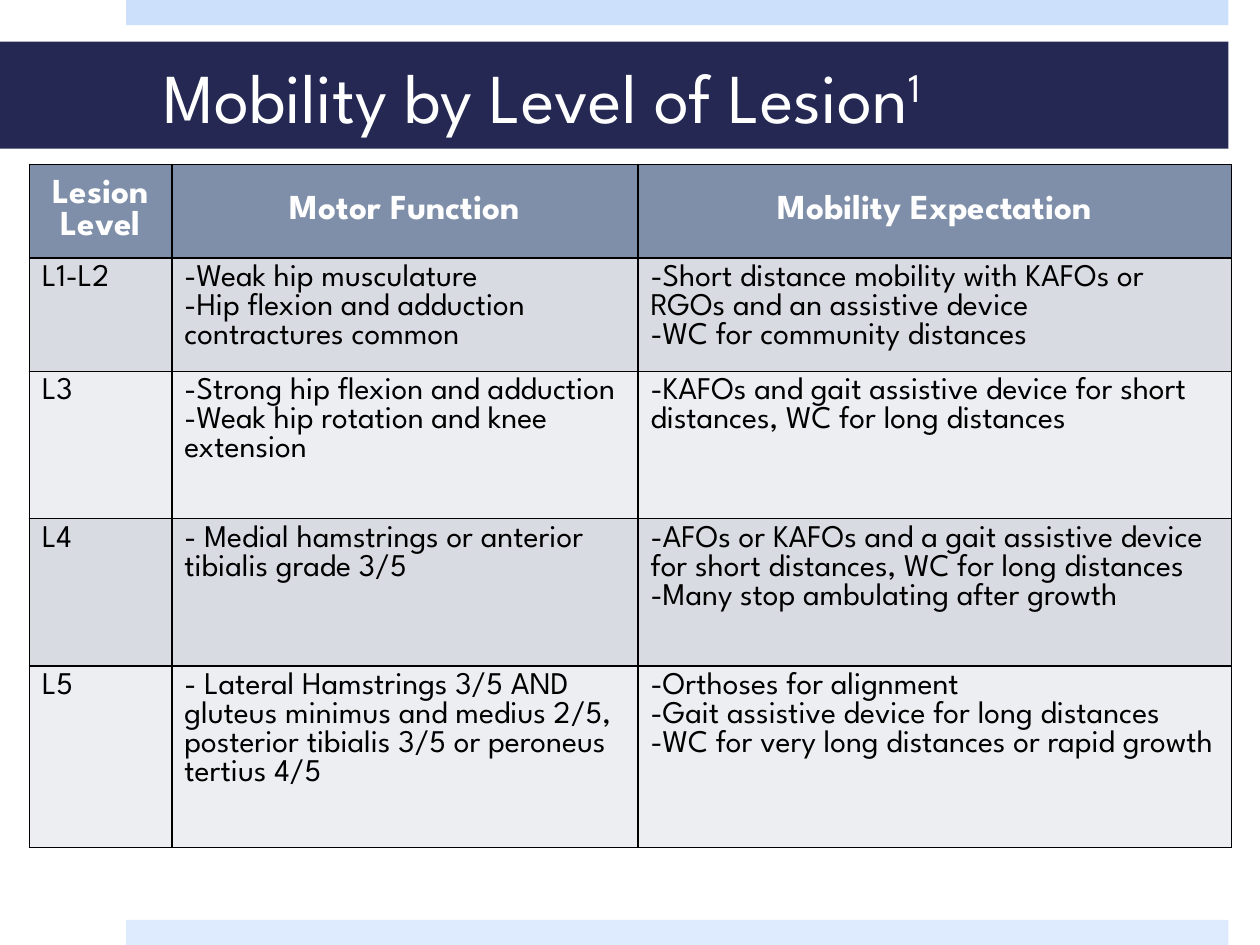
from pptx import Presentation
from pptx import util as u
from pptx.dml.color import RGBColor
from pptx.enum import shapes, text
from pptx.oxml import parse_xml
from pptx.oxml.ns import nsdecls

Pt = u.Pt
FONT = "League Spartan"
NAVY = RGBColor(0x24, 0x28, 0x52)
SKY = RGBColor(0xCD, 0xE0, 0xFB)
PALE = RGBColor(0xDE, 0xEA, 0xFD)
SLATE = RGBColor(0x7F, 0x8F, 0xA9)
BANDS = [RGBColor(0xD8, 0xDB, 0xE2), RGBColor(0xEC, 0xEE, 0xF1)]
WHITE = RGBColor(0xFF, 0xFF, 0xFF)
BLACK = RGBColor(0, 0, 0)

COLS = [81.4, 266.4, 339.1]
ROWS = [53.3, 64.8, 84.2, 84.2, 103.7]
HEAD = ["Lesion Level", "Motor Function", "Mobility Expectation"]
LEVELS = [
    ["L1-L2",
     "-Weak hip musculature\n-Hip flexion and adduction contractures common",
     "-Short distance mobility with KAFOs or RGOs and an assistive device\n"
     "-WC for community distances"],
    ["L3",
     "-Strong hip flexion and adduction\n-Weak hip rotation and knee extension",
     "-KAFOs and gait assistive device for short distances, "
     "WC for long distances"],
    ["L4",
     "- Medial hamstrings or anterior tibialis grade 3/5",
     "-AFOs or KAFOs and a gait assistive device for short distances, "
     "WC for long distances\n-Many stop ambulating after growth"],
    ["L5",
     "- Lateral Hamstrings 3/5 AND gluteus minimus and medius 2/5, "
     "posterior tibialis 3/5 or peroneus tertius 4/5",
     "-Orthoses for alignment\n-Gait assistive device for long distances\n"
     "-WC for very long distances or rapid growth"],
]


def style(run, size, color, bold=False):
    font = run.font
    font.name, font.size, font.bold = FONT, Pt(size), bold
    font.color.rgb = color


def add_bar(slide, top, color):
    bar = slide.shapes.add_shape(
        shapes.MSO_SHAPE.RECTANGLE, Pt(72), Pt(top), Pt(630), Pt(14.4))
    bar.shadow.inherit = False
    bar.fill.solid()
    bar.fill.fore_color.rgb = color
    bar.line.fill.background()


def set_title(slide, words, note):
    """Fill the title band; note is set as a superscript."""
    title = slide.shapes.title
    title.left, title.top = Pt(0), Pt(23.8)
    title.width, title.height = Pt(702), Pt(61.2)
    title.fill.solid()
    title.fill.fore_color.rgb = NAVY
    frame = title.text_frame
    frame.auto_size = text.MSO_AUTO_SIZE.NONE
    frame.vertical_anchor = text.MSO_ANCHOR.MIDDLE
    frame.margin_left, frame.margin_right = Pt(93.6), Pt(21.6)
    frame.margin_top = frame.margin_bottom = Pt(3.6)
    frame.text = words
    para = frame.paragraphs[0]
    para.alignment = text.PP_ALIGN.LEFT
    mark = para.add_run()
    mark.text = note
    for run in para.runs:
        style(run, 40, WHITE)
    mark.font._element.set("baseline", "30000")


def add_border(cell):
    props = cell._tc.get_or_add_tcPr()
    for spot, side in enumerate(["lnL", "lnR", "lnT", "lnB"]):
        props.insert(spot, parse_xml(
            f'<a:{side} {nsdecls("a")} w="{Pt(1)}"><a:solidFill>'
            f'<a:srgbClr val="{BLACK}"/></a:solidFill></a:{side}>'))


def fill_cell(cell, words, color, head):
    cell.fill.solid()
    cell.fill.fore_color.rgb = color
    add_border(cell)
    cell.text_frame.text = words
    if head:
        cell.vertical_anchor = text.MSO_ANCHOR.MIDDLE
    for para in cell.text_frame.paragraphs:
        if head:
            para.alignment = text.PP_ALIGN.CENTER
        for run in para.runs:
            style(run, 20 if head else 18, WHITE if head else BLACK, head)


def add_grid(slide):
    table = slide.shapes.add_table(
        len(ROWS), len(COLS), Pt(16.8), Pt(94.1),
        Pt(sum(COLS)), Pt(sum(ROWS))).table
    for col, width in zip(table.columns, COLS):
        col.width = Pt(width)
    for row, height in zip(table.rows, ROWS):
        row.height = Pt(height)
    for r, line in enumerate([HEAD] + LEVELS):
        color = BANDS[(r - 1) % 2] if r else SLATE
        for c, words in enumerate(line):
            fill_cell(table.cell(r, c), words, color, r == 0)


def main():
    deck = Presentation()
    deck.slide_width, deck.slide_height = Pt(720), Pt(540)
    slide = deck.slides.add_slide(deck.slide_layouts[5])
    add_bar(slide, 0, SKY)
    add_bar(slide, 525.6, PALE)
    set_title(slide, "Mobility by Level of Lesion", "1")
    add_grid(slide)
    deck.save("out.pptx")


if __name__ == "__main__":
    main()
